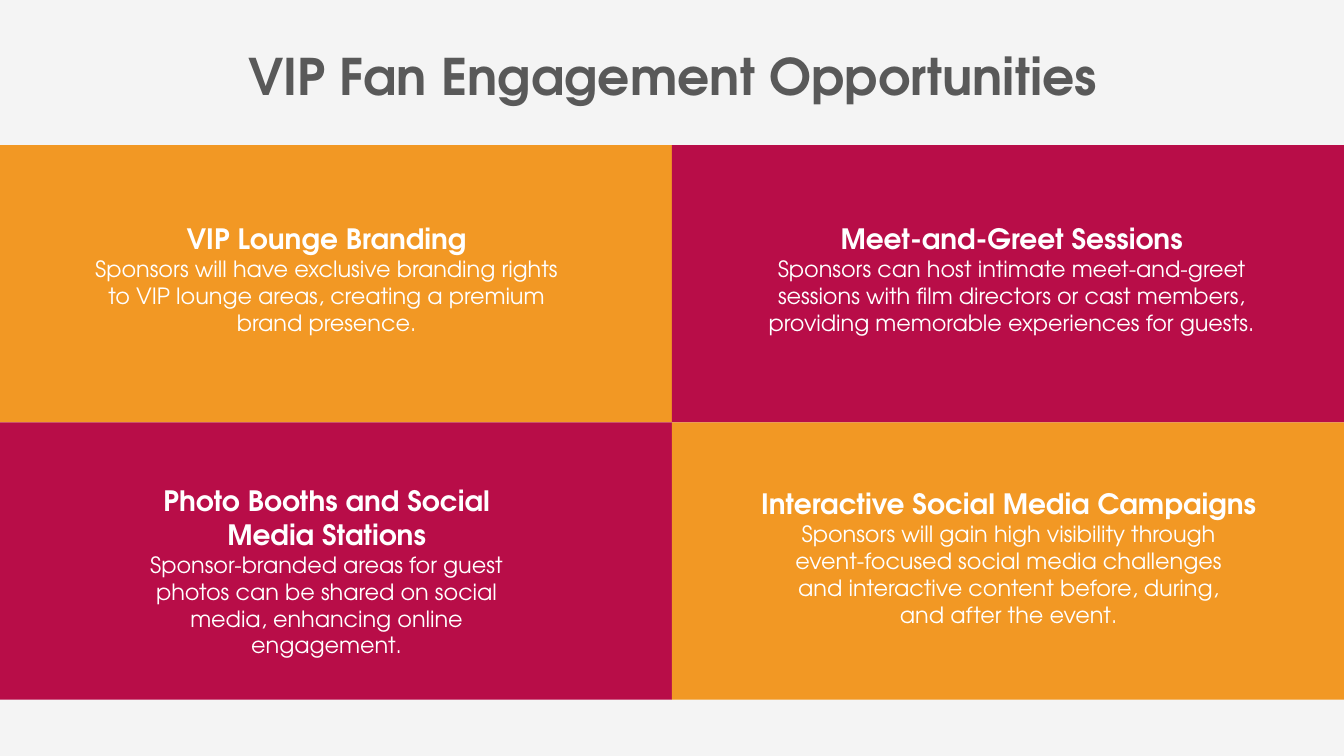
from pptx import Presentation
from pptx.dml.color import RGBColor
from pptx.enum.shapes import MSO_SHAPE
from pptx.enum.text import MSO_ANCHOR, MSO_AUTO_SIZE, PP_ALIGN
from pptx.util import Inches, Pt

RECTANGLE = MSO_SHAPE.ROUNDED_RECTANGLE
CENTER = PP_ALIGN.CENTER
TOP = MSO_ANCHOR.TOP
FIT_SHAPE = MSO_AUTO_SIZE.SHAPE_TO_FIT_TEXT

FONT = "TeX Gyre Adventor"
COLORS = {
    "background": "F4F4F4",
    "title": "595959",
    "orange": "F29824",
    "crimson": "B80D48",
    "white": "FFFFFF",
}

SLIDE_WIDTH, SLIDE_HEIGHT = 13.33, 7.5
TILE_TOP, TILE_WIDTH, TILE_HEIGHT = 1.44, SLIDE_WIDTH / 2, 2.75

# Text box (left, top, width, height), heading, description; row by row
OPPORTUNITIES = [
    ((0.72, 2.15, 5.04, 1.25), "VIP Lounge Branding",
     "Sponsors will have exclusive branding rights to VIP lounge areas, "
     "creating a premium brand presence."),
    ((7.47, 2.15, 5.13, 1.25), "Meet-and-Greet Sessions",
     "Sponsors can host intimate meet-and-greet sessions with film directors "
     "or cast members, providing memorable experiences for guests."),
    ((1.07, 4.75, 4.34, 1.85), "Photo Booths and Social Media Stations",
     "Sponsor-branded areas for guest photos can be shared on social media, "
     "enhancing online engagement."),
    ((7.44, 4.78, 5.13, 1.51), "Interactive Social Media Campaigns",
     "Sponsors will gain high visibility through\n"
     "event-focused social media challenges\n"
     "and interactive content before, during,\n"
     "and after the event."),
]


def color(name):
    return RGBColor.from_string(COLORS[name])


def write(para, text, size, color_name="white", bold=False):
    """Fill a centred paragraph, turning newlines into line breaks."""
    para.alignment = CENTER
    for index, line in enumerate(text.split("\n")):
        if index:
            para.add_line_break()
        span = para.add_run()
        span.text = line
        span.font.name = FONT
        span.font.size = Pt(size)
        span.font.bold = bold
        span.font.color.rgb = color(color_name)


def prepare_frame(frame):
    frame.word_wrap = True
    frame.auto_size = FIT_SHAPE
    frame.vertical_anchor = TOP


def add_title(page, text):
    title = page.shapes.title
    title.left, title.top = Inches(2.23), Inches(0.4)
    title.width, title.height = Inches(8.88), Inches(0.71)
    prepare_frame(title.text_frame)
    write(title.text_frame.paragraphs[0], text, 36, "title", bold=True)


def add_tile(page, row, column):
    tile = page.shapes.add_shape(
        RECTANGLE, Inches(column * TILE_WIDTH),
        Inches(TILE_TOP + row * TILE_HEIGHT),
        Inches(TILE_WIDTH), Inches(TILE_HEIGHT))
    tile.adjustments[0] = 0
    tile.shadow.inherit = False
    tile.fill.solid()
    tile.fill.fore_color.rgb = color("crimson" if (row + column) % 2 else "orange")
    tile.line.fill.background()


def add_opportunity(page, place, heading, description):
    box = page.shapes.add_textbox(*map(Inches, place))
    frame = box.text_frame
    prepare_frame(frame)
    write(frame.paragraphs[0], heading, 20, bold=True)
    write(frame.add_paragraph(), description, 16)


def main():
    deck = Presentation()
    deck.slide_width, deck.slide_height = Inches(SLIDE_WIDTH), Inches(SLIDE_HEIGHT)
    page = deck.slides.add_slide(deck.slide_layouts.get_by_name("Title Only"))
    page.background.fill.solid()
    page.background.fill.fore_color.rgb = color("background")

    # Title
    add_title(page, "VIP Fan Engagement Opportunities")

    # Checkerboard of tiles, then their texts
    for index in range(len(OPPORTUNITIES)):
        add_tile(page, *divmod(index, 2))
    for place, heading, description in OPPORTUNITIES:
        add_opportunity(page, place, heading, description)

    deck.save("out.pptx")


if __name__ == "__main__":
    main()
